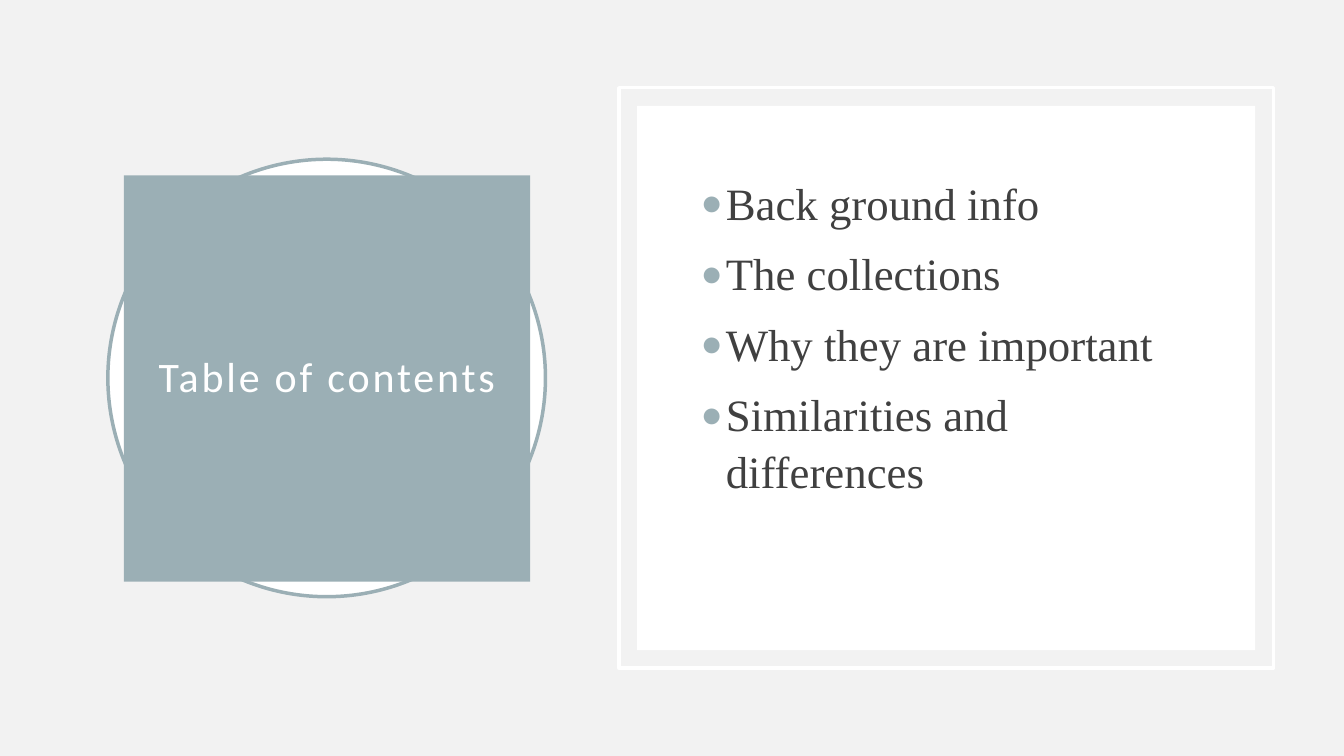
from lxml import etree
from pptx import Presentation
from pptx.dml.color import RGBColor
from pptx.enum import shapes, text
from pptx.oxml import ns
from pptx.util import Inches, Pt

TITLE = "Table of contents"
TOPICS = [
    "Back ground info",
    "The collections",
    "Why they are important",
    "Similarities and differences",
]

GREY, WHITE, TEAL, INK = "F2F2F2", "FFFFFF", "9BAFB5", "404040"
RECT, OVAL = shapes.MSO_SHAPE.RECTANGLE, shapes.MSO_SHAPE.OVAL

# left, top, width, height in inches
CIRCLE = (1.07, 1.58, 4.34, 4.34)
TITLE_SQUARE = (1.23, 1.74, 4.03, 4.03)
FRAME = (6.14, 0.87, 6.49, 5.76)
PANEL = (6.32, 1.05, 6.13, 5.4)
TOPIC_BOX = (6.85, 1.58, 5.09, 4.34)


def color(value):
    return RGBColor.from_string(value)


def add_panel(page, kind, place, fill=None, line=None):
    panel = page.shapes.add_shape(kind, *map(Inches, place))
    panel.shadow.inherit = False
    if fill:
        panel.fill.solid()
        panel.fill.fore_color.rgb = color(fill)
    else:
        panel.fill.background()
    if line:
        panel.line.color.rgb = color(line)
        panel.line.width = Pt(2.5)
    else:
        panel.line.fill.background()
    return panel


def add_span(para, words, font, size, ink):
    span = para.add_run()
    span.text = words
    span.font.name = font
    span.font.size = Pt(size)
    span.font.color.rgb = color(ink)
    return span


def add_bullet(para, mark, ink):
    """Give a paragraph a hanging, coloured bullet."""
    props = para._p.get_or_add_pPr()
    props.set("marL", str(Inches(0.25)))
    props.set("indent", str(-Inches(0.25)))
    bullet_color = etree.SubElement(props, ns.qn("a:buClr"))
    etree.SubElement(bullet_color, ns.qn("a:srgbClr"), val=ink)
    etree.SubElement(props, ns.qn("a:buFont"), typeface="Calibri")
    etree.SubElement(props, ns.qn("a:buChar"), char=mark)


def add_title(page):
    square = add_panel(page, RECT, TITLE_SQUARE, fill=TEAL)
    frame = square.text_frame
    frame.word_wrap = True
    frame.vertical_anchor = text.MSO_ANCHOR.MIDDLE
    frame.margin_left = frame.margin_right = Inches(0.2)
    frame.margin_top = frame.margin_bottom = Inches(0.2)
    para = frame.paragraphs[0]
    para.alignment = text.PP_ALIGN.CENTER
    para.line_spacing = 0.9
    span = add_span(para, TITLE, "Calibri", 30, WHITE)
    span.font._element.set("spc", "200")


def add_topics(page):
    box = page.shapes.add_textbox(*map(Inches, TOPIC_BOX))
    frame = box.text_frame
    frame.word_wrap = True
    frame.vertical_anchor = text.MSO_ANCHOR.MIDDLE
    frame.margin_bottom = Inches(0.9)
    for index, topic in enumerate(TOPICS):
        para = frame.add_paragraph() if index else frame.paragraphs[0]
        para.space_before = Pt(10)
        para.line_spacing = 1.05
        add_bullet(para, "•", TEAL)
        add_span(para, topic, "Times New Roman", 32, INK)


def main():
    deck = Presentation()
    deck.slide_width, deck.slide_height = Inches(13.33), Inches(7.5)
    page = deck.slides.add_slide(deck.slide_layouts[6])
    page.background.fill.solid()
    page.background.fill.fore_color.rgb = color(GREY)
    add_panel(page, OVAL, CIRCLE, fill=WHITE, line=TEAL)
    add_title(page)
    add_panel(page, RECT, FRAME, line=WHITE)
    add_panel(page, RECT, PANEL, fill=WHITE)
    add_topics(page)
    deck.save("out.pptx")


if __name__ == "__main__":
    main()
